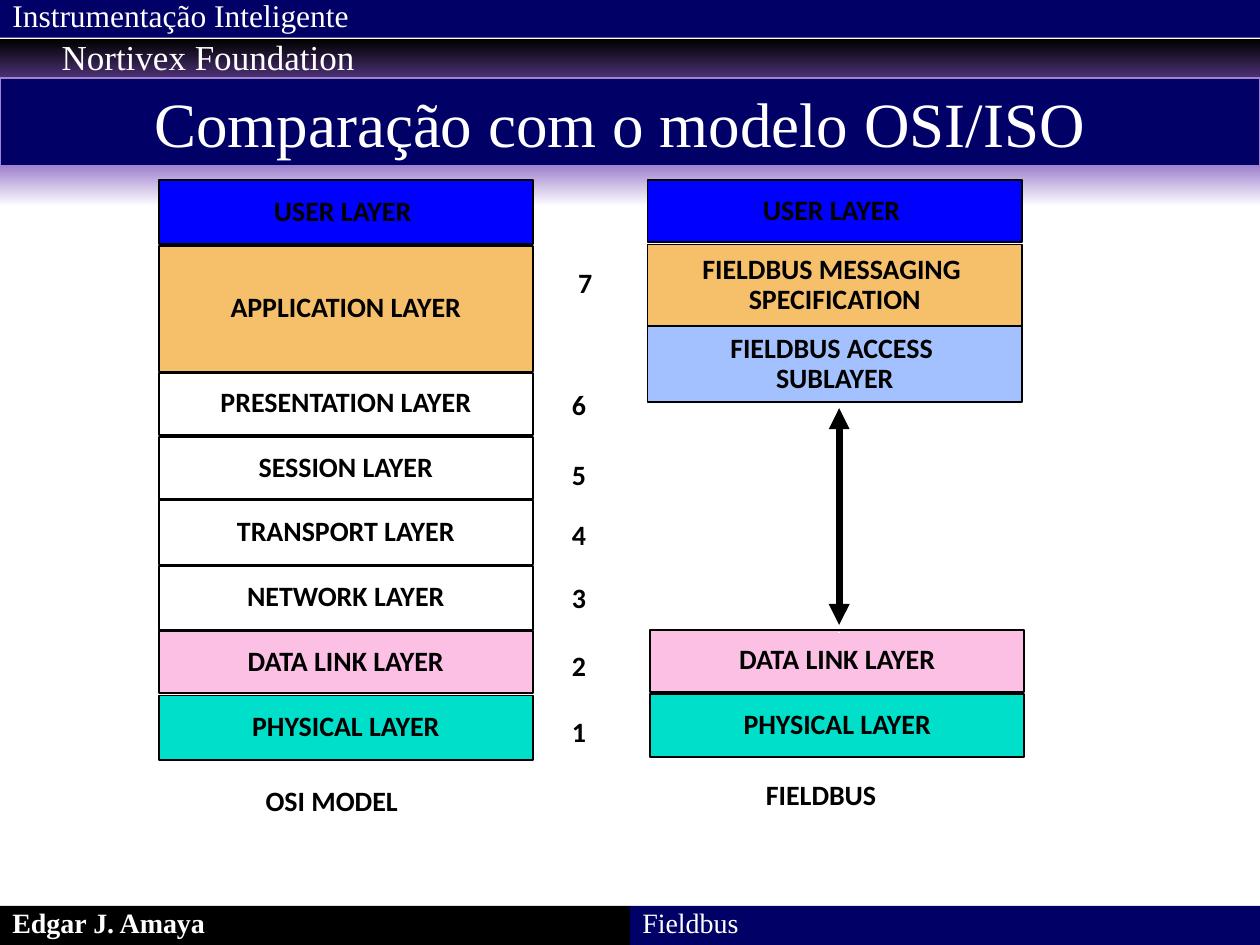
from dataclasses import dataclass
from itertools import chain

from lxml import etree
from pptx import Presentation
from pptx.dml.color import RGBColor
from pptx.enum import shapes, text
from pptx.oxml.ns import qn
from pptx.util import Inches, Pt

COLORS = {
    "black": "000000", "white": "FFFFFF", "navy": "000066",
    "plum": "4D3175", "lilac": "A184D0", "user": "0000FF",
    "application": "F6BF69", "access": "A2C1FE",
    "data link": "FDC0E5", "physical": "00DFCA",
}
SERIF, SANS = "Times New Roman", "Calibri"
LAYER_WIDTH = 2.97


@dataclass
class Layer:
    label: str
    left: float
    top: float
    height: float
    color: str | None = None


@dataclass
class Label:
    words: str
    left: float
    top: float
    width: float
    height: float
    size: int
    centered: bool = False


OSI_LAYERS = [
    Layer("USER LAYER ", 1.26, 1.43, 0.51, "user"),
    Layer("APPLICATION LAYER", 1.26, 1.95, 1, "application"),
    Layer("PRESENTATION LAYER", 1.26, 2.96, 0.49),
    Layer("SESSION LAYER", 1.26, 3.47, 0.49),
    Layer("TRANSPORT LAYER", 1.26, 3.97, 0.51),
    Layer("NETWORK LAYER", 1.26, 4.49, 0.51),
    Layer("DATA LINK LAYER", 1.26, 5.01, 0.49, "data link"),
    Layer("PHYSICAL LAYER", 1.26, 5.52, 0.51, "physical"),
]
FIELDBUS_LAYERS = [
    Layer("USER LAYER ", 5.14, 1.43, 0.49, "user"),
    Layer("FIELDBUS MESSAGING \nSPECIFICATION", 5.14, 1.94, 0.65, "application"),
    Layer("FIELDBUS ACCESS \nSUBLAYER", 5.14, 2.59, 0.6, "access"),
    Layer("DATA LINK LAYER", 5.16, 5, 0.49, "data link"),
    Layer("PHYSICAL LAYER", 5.16, 5.51, 0.5, "physical"),
]
HEADINGS = [
    Label("Instrumentação Inteligente", 0, -0.08, 6.33, 0.4, 18),
    Label("Nortivex Foundation", 0.39, 0.23, 5, 0.44, 20),
    Label("Comparação com o modelo OSI/ISO", 0, 0.62, 9.84, 0.71, 36, True),
]
COLUMN_NAMES = [
    Label("OSI MODEL", 2.01, 6.2, 1.45, 0.34, 16),
    Label("FIELDBUS", 5.98, 6.15, 1.31, 0.34, 16),
]
NUMBER_TOPS = [5.65, 5.13, 4.59, 4.09, 3.61, 3.06, 2.09]
LAYER_NUMBERS = [
    Label(str(number), 4.49 if number == 7 else 4.44, top, 0.32, 0.34, 16)
    for number, top in enumerate(NUMBER_TOPS, start=1)
]


def rgb(name: str) -> RGBColor:
    return RGBColor.from_string(COLORS[name])


def write(shape, words: str, font_name: str, size: int, color: str,
          bold: bool = False, align=text.PP_ALIGN.LEFT, spacing=None) -> None:
    frame = shape.text_frame
    frame.text = words
    for paragraph in frame.paragraphs:
        paragraph.alignment = align
        paragraph.line_spacing = spacing
        font = paragraph.font
        font.name, font.size, font.bold = font_name, Pt(size), bold
        font.color.rgb = rgb(color)


def add_rectangle(slide, left: float, top: float, width: float, height: float,
                  color: str | None, line: str | None = None):
    rectangle = slide.shapes.add_shape(
        shapes.MSO_SHAPE.RECTANGLE,
        Inches(left), Inches(top), Inches(width), Inches(height))
    rectangle.shadow.inherit = False
    if color:
        rectangle.fill.solid()
        rectangle.fill.fore_color.rgb = rgb(color)
    else:
        rectangle.fill.background()
    if line:
        rectangle.line.color.rgb = rgb(line)
        rectangle.line.width = Pt(1)
    else:
        rectangle.line.fill.background()
    return rectangle


def add_fading_band(slide, top: float, height: float,
                    upper: str, lower: str) -> None:
    """Draw a full-width band that shades from its upper to its lower colour."""
    fill = add_rectangle(slide, 0, top, 10, height, upper).fill
    fill.gradient()
    fill.gradient_angle = 270
    for stop, color, position in zip(fill.gradient_stops, (upper, lower), (0, 1)):
        stop.color.rgb = rgb(color)
        stop.position = position


def add_footer(slide, words: str, left: float, color: str, bold: bool) -> None:
    footer = add_rectangle(slide, left, 7.19, 5, 0.31, color)
    footer.text_frame.vertical_anchor = text.MSO_ANCHOR.BOTTOM
    write(footer, words, SERIF, 16, "white", bold)


def add_layer(slide, layer: Layer) -> None:
    box = add_rectangle(slide, layer.left, layer.top, LAYER_WIDTH,
                        layer.height, layer.color, "black")
    box.text_frame.word_wrap = False
    box.text_frame.vertical_anchor = text.MSO_ANCHOR.MIDDLE
    write(box, layer.label, SANS, 16, "black", True, text.PP_ALIGN.CENTER, 0.9)


def add_label(slide, label: Label, heading: bool = False) -> None:
    box = slide.shapes.add_textbox(Inches(label.left), Inches(label.top),
                                   Inches(label.width), Inches(label.height))
    box.text_frame.word_wrap = heading
    align = text.PP_ALIGN.CENTER if label.centered else text.PP_ALIGN.LEFT
    if heading:
        write(box, label.words, SERIF, label.size, "white", align=align)
    else:
        write(box, label.words, SANS, label.size, "black", True, align, 0.9)


def add_line(slide, start: tuple[float, float], end: tuple[float, float],
             color: str, width: float, arrows: bool = False) -> None:
    connector = slide.shapes.add_connector(
        shapes.MSO_CONNECTOR.STRAIGHT, *map(Inches, start + end))
    connector.line.color.rgb = rgb(color)
    connector.line.width = Pt(width)
    if arrows:
        outline = connector.line._get_or_add_ln()
        for tag in ("a:headEnd", "a:tailEnd"):
            etree.SubElement(outline, qn(tag), type="triangle")
    etree.SubElement(connector._element.spPr, qn("a:effectLst"))


def main() -> None:
    presentation = Presentation()
    presentation.slide_width, presentation.slide_height = Inches(10), Inches(7.5)
    slide = presentation.slides.add_slide(presentation.slide_layouts[6])

    add_fading_band(slide, 0.31, 0.31, "black", "plum")
    add_fading_band(slide, 1.32, 0.32, "lilac", "white")
    add_rectangle(slide, 0, 0.62, 10, 0.7, "navy", "lilac")
    add_rectangle(slide, 0, 0, 10, 0.3, "navy")
    add_footer(slide, "Edgar J. Amaya", 0, "black", True)
    add_footer(slide, "Fieldbus", 5, "navy", False)

    for layer in chain(OSI_LAYERS, FIELDBUS_LAYERS):
        add_layer(slide, layer)
    add_line(slide, (6.66, 3.24), (6.66, 4.96), "black", 4, arrows=True)
    add_line(slide, (6.65, 5.02), (6.67, 5.02), "white", 1)

    for label in chain(COLUMN_NAMES, LAYER_NUMBERS):
        add_label(slide, label)
    for label in HEADINGS:
        add_label(slide, label, heading=True)

    presentation.save("out.pptx")


if __name__ == "__main__":
    main()
